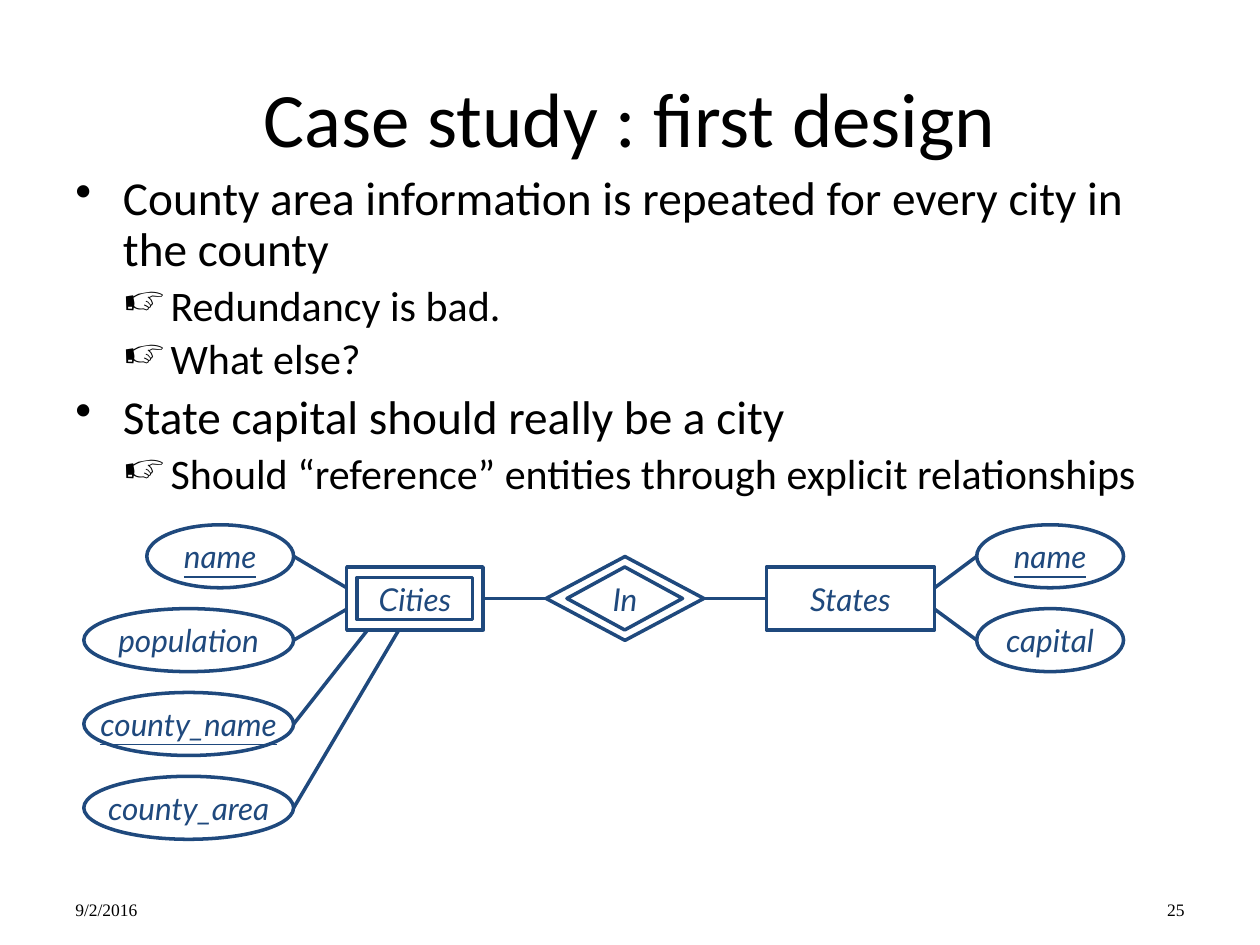
from lxml import etree
from pptx import Presentation
from pptx import util as u
from pptx.dml.color import RGBColor
from pptx.enum import shapes, text
from pptx.oxml.ns import qn

Cm, Pt = u.Cm, u.Pt
INK, BLUE = "000000", "1F497D"
MID, LEFT, RIGHT = text.PP_ALIGN.CENTER, text.PP_ALIGN.LEFT, text.PP_ALIGN.RIGHT
KIND = shapes.MSO_SHAPE


def color(obj, hue):
    obj.rgb = RGBColor.from_string(hue)


def write(par, words, hue, align, **form):
    par.alignment = align
    run = par.add_run()
    run.text = words
    for key, val in form.items():
        setattr(run.font, key, val)
    color(run.font.color, hue)


deck = Presentation()
deck.slide_width, deck.slide_height = Cm(25.4), Cm(19.05)
slide = deck.slides.add_slide(deck.slide_layouts[6])
items = slide.shapes

# Title and footer
for words, x, y, w, h, align, size, face in [
    ("Case study : first design", 1.27, 0.76, 22.86, 3.18, MID, 44, "Calibri"),
    ("25", 18.2, 17.99, 5.93, 0.64, RIGHT, 10, "Times New Roman"),
    ("9/2/2016", 1.27, 17.99, 5.93, 0.64, LEFT, 10, "Times New Roman"),
]:
    frame = items.add_textbox(Cm(x), Cm(y), Cm(w), Cm(h)).text_frame
    frame.word_wrap = True
    if size == 44:
        frame.vertical_anchor = text.MSO_ANCHOR.MIDDLE
    write(frame.paragraphs[0], words, INK, align, size=Pt(size), name=face)

# Bulleted points
frame = items.add_textbox(Cm(1.27), Cm(3.39), Cm(22.86), Cm(13.72)).text_frame
frame.word_wrap = True
points = [
    (0, "County area information is repeated for every city in the county"),
    (1, "Redundancy is bad."),
    (1, "What else?"),
    (0, "State capital should really be a city"),
    (1, "Should “reference” entities through explicit relationships"),
]
for i, (level, words) in enumerate(points):
    par = frame.add_paragraph() if i else frame.paragraphs[0]
    size = (27, 24)[level]
    par.level, par.line_spacing, par.space_before = level, 0.9, Pt(size * 0.2)
    write(par, words, INK, LEFT, size=Pt(size), name="Calibri")
    props = par._p.get_or_add_pPr()
    props.set("marL", str(Cm(0.96 * (level + 1))))
    props.set("indent", str(-Cm(0.96)))
    etree.SubElement(props, qn("a:buChar")).set("char", "•☞"[level])

# Diagram nodes: key, kind, label, place, underline
ROW, GAP = 10.58, 1.69
nodes = [
    ("city", KIND.RECTANGLE, "Cities", 6.99, 11.43, 2.75, 1.27, False),
    ("city in", KIND.RECTANGLE, "", 7.2, 11.64, 2.33, 0.85, False),
    ("link", KIND.FLOWCHART_DECISION, "In", 11.01, 11.22, 3.18, 1.69, False),
    ("link in", KIND.FLOWCHART_DECISION, "", 11.43, 11.43, 2.33, 1.27, False),
    ("state", KIND.RECTANGLE, "States", 15.45, 11.43, 3.39, 1.27, False),
]
for row, (words, x, w, line) in enumerate([
    ("name", 2.96, 2.96, True),
    ("population", 1.69, 4.23, False),
    ("county_name", 1.69, 4.23, True),
    ("county_area", 1.69, 4.23, False),
]):
    nodes.append((words, KIND.OVAL, words, x, ROW + row * GAP, w, 1.27, line))
for row, words in enumerate(["name", "capital"]):
    nodes.append(("state " + words, KIND.OVAL, words, 19.69, ROW + row * GAP,
                  2.96, 1.27, row == 0))

made = {}
for key, kind, words, x, y, w, h, line in nodes:
    node = made[key] = items.add_shape(kind, Cm(x), Cm(y), Cm(w), Cm(h))
    node.shadow.inherit = False
    node.fill.background()
    node.line.width = Pt(2)
    color(node.line.color, BLUE)
    if words:
        frame = node.text_frame
        frame.word_wrap = False
        frame.vertical_anchor = text.MSO_ANCHOR.MIDDLE
        write(frame.paragraphs[0], words, BLUE, MID, size=Pt(18), name="Lato",
              italic=True, underline=line)

# Lines: ends, then the nodes joined at right and left sides
mids = [ROW + 0.635 + row * GAP for row in range(4)]
for x1, y1, x2, y2, *ends in [
    (9.74, 12.07, 11.01, 12.07, "city", "link"),
    (14.19, 12.07, 15.45, 12.07, "link", "state"),
    (5.92, mids[0], 6.99, 11.85),
    (5.92, mids[1], 6.99, 12.28),
    (5.92, mids[2], 7.41, 12.7),
    (5.92, mids[3], 8.04, 12.7),
    (18.84, 11.85, 19.69, mids[0]),
    (18.84, 12.28, 19.69, mids[1]),
]:
    wire = items.add_connector(shapes.MSO_CONNECTOR.STRAIGHT,
                               Cm(x1), Cm(y1), Cm(x2), Cm(y2))
    if ends:
        wire.begin_connect(made[ends[0]], 3)
        wire.end_connect(made[ends[1]], 1)
    wire.line.width = Pt(2)
    color(wire.line.color, BLUE)
    etree.SubElement(wire._element.spPr, qn("a:effectLst"))

deck.save("out.pptx")
